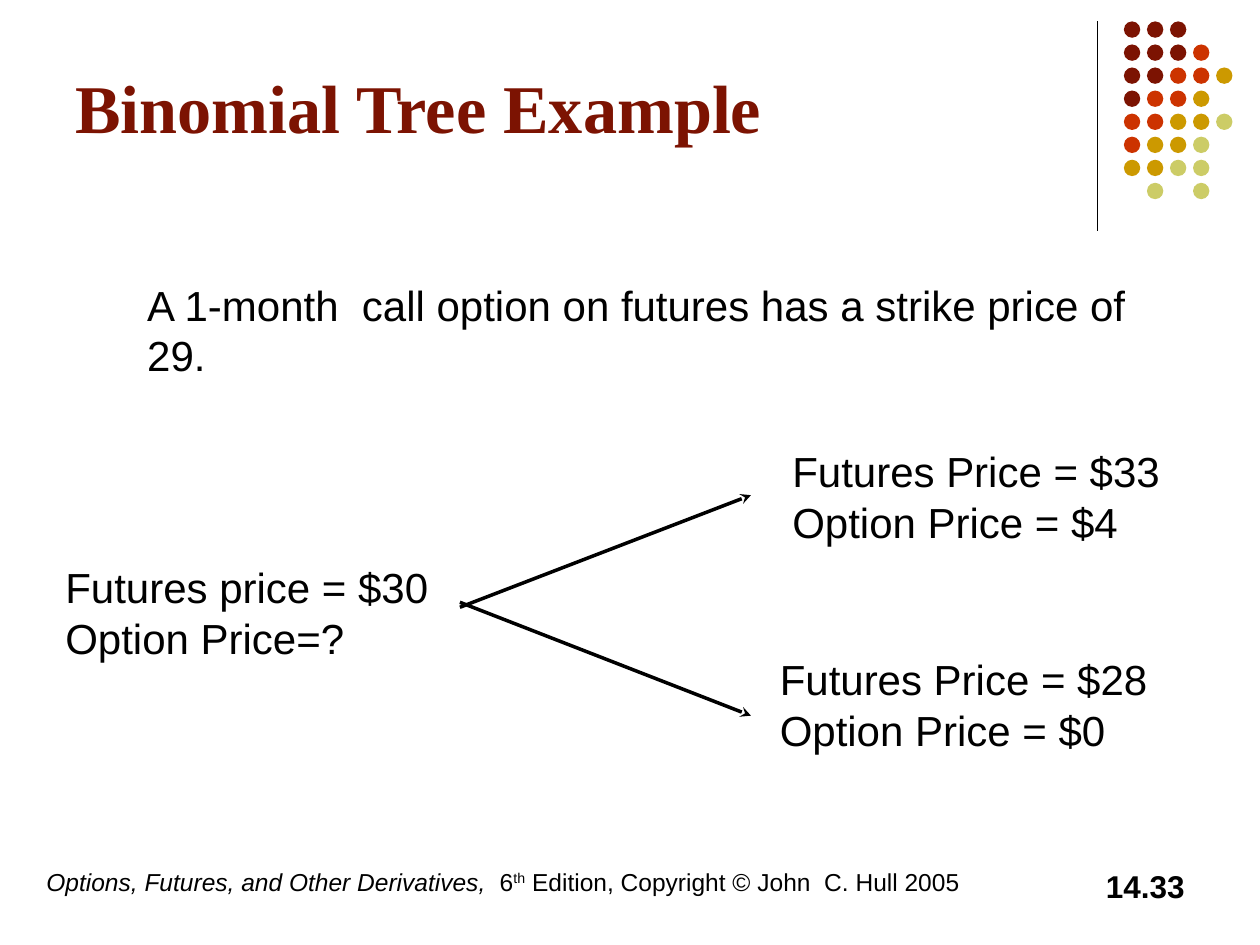
from lxml import etree
from pptx import Presentation
from pptx.dml.color import RGBColor
from pptx.enum import shapes, text
from pptx.oxml import ns
from pptx.util import Inches, Pt

COLORS = {
    "black": "000000",
    "maroon": "7C1302",
    "red": "CC3300",
    "gold": "CC9900",
    "olive": "CCCC66",
}


def add_text(box, lines, size=24, font="Arial", color="black", bold=False,
             align=text.PP_ALIGN.LEFT, anchor=text.MSO_ANCHOR.TOP):
    """Add a text box at (left, top, width, height) and return its paragraphs."""
    frame = slide.shapes.add_textbox(*map(Inches, box)).text_frame
    frame.word_wrap = True
    frame.vertical_anchor = anchor
    frame.text = "\n".join(lines)
    for paragraph in frame.paragraphs:
        paragraph.alignment = align
        for run in paragraph.runs:
            run.font.size = Pt(size)
            run.font.name = font
            run.font.bold = bold
            run.font.color.rgb = RGBColor.from_string(COLORS[color])
    return frame.paragraphs


def add_line(start, end, width):
    """Add a black straight line without shadow and return it."""
    line = slide.shapes.add_connector(
        shapes.MSO_CONNECTOR.STRAIGHT, *map(Inches, start + end))
    line.line.width = Pt(width)
    line.line.color.rgb = RGBColor.from_string(COLORS["black"])
    etree.SubElement(line._element.spPr, ns.qn("a:effectLst"))
    return line


presentation = Presentation()
presentation.slide_width = Inches(10)
presentation.slide_height = Inches(7.5)
slide = presentation.slides.add_slide(presentation.slide_layouts[6])

# Corner decoration: a rule and a grid of dots, one letter per colour
add_line((8.71, 0.17), (8.71, 1.83), 0.75)
dot_colors = {"m": "maroon", "r": "red", "g": "gold", "o": "olive"}
dot_rows = ["mmm", "mmmr", "mmrrg", "mrrg", "rrggo", "rggo", "ggoo", " o o"]
dot_pitch = 0.183
for row, letters in enumerate(dot_rows):
    for column, letter in enumerate(letters):
        if letter == " ":
            continue
        dot = slide.shapes.add_shape(
            shapes.MSO_SHAPE.OVAL,
            Inches(8.92 + column * dot_pitch), Inches(0.17 + row * dot_pitch),
            Inches(0.13), Inches(0.13))
        dot.shadow.inherit = False
        dot.fill.solid()
        dot.fill.fore_color.rgb = RGBColor.from_string(COLORS[dot_colors[letter]])
        dot.line.fill.background()

# Title and statement
add_text((0.5, 0.13, 8.25, 1.42), ["Binomial Tree Example"], size=39,
         font="Times New Roman", color="maroon", bold=True,
         anchor=text.MSO_ANCHOR.MIDDLE)
statement = add_text(
    (0.69, 2.17, 8.62, 4.5),
    ["A 1-month  call option on futures has a strike price of 29."])[0]
statement._p.get_or_add_pPr().set("marL", str(Inches(0.38)))

# Tree: branches and nodes
for start, end in [((3.65, 4.82), (5.96, 3.93)), ((3.65, 4.78), (5.96, 5.68))]:
    branch = add_line(start, end, 2)
    etree.SubElement(branch.line._get_or_add_ln(), ns.qn("a:tailEnd"), type="stealth")

add_text((6.19, 3.49, 3.16, 0.9), ["Futures Price = $33", "Option Price = $4"])
add_text((6.09, 5.14, 3.62, 0.9), ["Futures Price = $28", "Option Price = $0"])
add_text((0.42, 4.41, 3.45, 0.9), ["Futures price = $30", "Option Price=?"])

# Footer and page number
footer = add_text((0.27, 6.83, 8.27, 0.5),
                  ["Options, Futures, and Other Derivatives, "], size=14)[0]
footer.runs[0].font.italic = True
for words in [" 6", "th", " Edition, Copyright © John  C. Hull 2005"]:
    run = footer.add_run()
    run.text = words
    run.font.size = Pt(14)
    run.font.name = "Arial"
    run.font.color.rgb = RGBColor.from_string(COLORS["black"])
    if words == "th":
        run._r.get_or_add_rPr().set("baseline", "30000")
add_text((7.17, 6.83, 2.33, 0.5), ["14.33"], size=18, bold=True,
         align=text.PP_ALIGN.RIGHT)

presentation.save("out.pptx")
